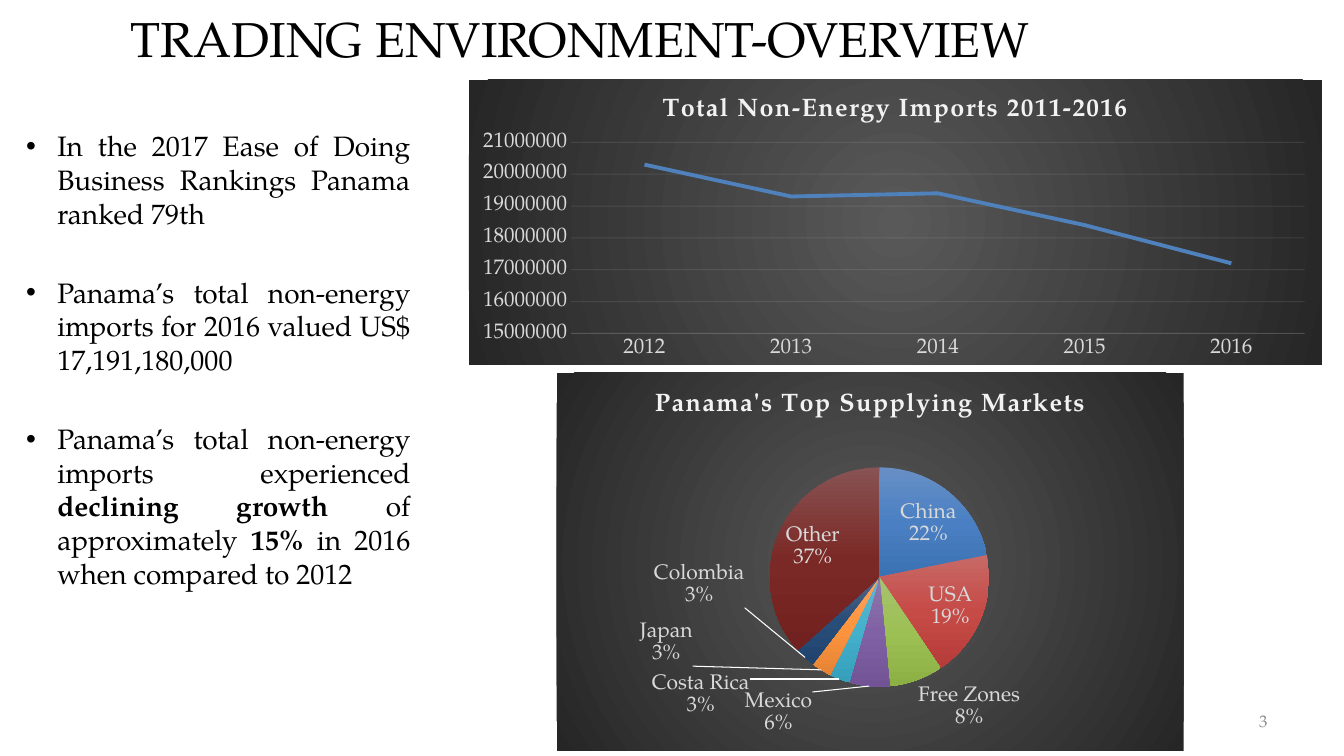
from copy import deepcopy

from lxml.etree import SubElement
from pptx import Presentation
from pptx.chart.data import CategoryChartData
from pptx.dml.color import RGBColor
from pptx.enum.chart import XL_CHART_TYPE as ChartType
from pptx.enum.chart import XL_LABEL_POSITION as LabelPosition
from pptx.enum.chart import XL_TICK_MARK as TickMark
from pptx.enum.text import MSO_ANCHOR as Anchor
from pptx.enum.text import PP_ALIGN as Align
from pptx.oxml import parse_xml
from pptx.oxml.ns import nsdecls, qn
from pptx.util import Inches, Pt

FONT = "TeX Gyre Pagella"
BLACK = RGBColor(0x00, 0x00, 0x00)
WHITE = RGBColor(0xFF, 0xFF, 0xFF)
PALE = RGBColor(0xF2, 0xF2, 0xF2)
LABEL_GREY = RGBColor(0xD9, 0xD9, 0xD9)
NUMBER_GREY = RGBColor(0x8C, 0x8C, 0x8C)
BLUE = RGBColor(0x4F, 0x81, 0xBD)
PANEL = (RGBColor(0x59, 0x59, 0x59), RGBColor(0x26, 0x26, 0x26))

BULLETS = [
    [("In the 2017 Ease of Doing Business Rankings Panama ranked 79th", False)],
    [("Panama’s total non-energy imports for 2016 valued US$ 17,191,180,000", False)],
    [
        ("Panama’s total non-energy imports experienced ", False),
        ("declining growth ", True),
        ("of approximately ", False),
        ("15% ", True),
        ("in 2016 when compared to 2012", False),
    ],
]
IMPORTS = {"2012": 20300000, "2013": 19300000, "2014": 19400000,
           "2015": 18400000, "2016": 17200000}
MARKETS = {"China": 22, "USA": 19, "Free Zones": 8, "Mexico": 6,
           "Costa Rica": 3, "Japan": 3, "Colombia": 3, "Other": 37}
SLICE_COLOURS = [
    [RGBColor.from_string(code) for code in codes.split()]
    for codes in (
        "688FC5 4A80C3 3B72B3", "C76967 C64B47 B63C39",
        "A6C36F 9DC054 8DB045", "8E78AC 8061A5 715396",
        "66B5CD 45B0CC 36A0BC", "FAA263 FF953E E58435",
        "536686 284D79 20446E", "885353 7B2926 71211F",
    )
]
LABEL_SHIFTS = {3: (-0.09, 0), 4: (-0.14, -0.03), 5: (-0.2, -0.14), 6: (-0.09, -0.26)}


def style_font(font, size, colour, bold=False):
    """Set the typeface, size, colour and weight of a font."""
    font.name, font.size, font.bold = FONT, Pt(size), bold
    font.color.rgb = colour


def add_run(paragraph, text, size, colour, bold=False):
    """Append one styled run to a paragraph."""
    run = paragraph.add_run()
    run.text = text
    style_font(run.font, size, colour, bold)
    return run


def gradient(colours, direction):
    """Return a gradient fill with evenly spaced stops."""
    last = len(colours) - 1
    stops = "".join(
        f'<a:gs pos="{100000 * index // last}"><a:srgbClr val="{colour}"/></a:gs>'
        for index, colour in enumerate(colours)
    )
    return parse_xml(
        f'<a:gradFill {nsdecls("a")} rotWithShape="1"><a:gsLst>{stops}</a:gsLst>'
        f"{direction}</a:gradFill>"
    )


def manual_layout(**settings):
    """Return a manual chart layout holding the given settings."""
    items = "".join(f'<c:{name} val="{value}"/>' for name, value in settings.items())
    return parse_xml(
        f'<c:layout {nsdecls("c")}><c:manualLayout>{items}</c:manualLayout></c:layout>'
    )


def add_title(slide, box):
    """Place the slide title in its placeholder."""
    title = slide.shapes.title
    title.left, title.top, title.width, title.height = map(Inches, box)
    frame = title.text_frame
    frame.vertical_anchor = Anchor.MIDDLE
    paragraph = frame.paragraphs[0]
    paragraph.alignment = Align.CENTER
    add_run(paragraph, "TRADING ENVIRONMENT-OVERVIEW", 35, BLACK)


def add_bullets(slide, box):
    """Write the justified bullet list."""
    frame = slide.shapes.add_textbox(*map(Inches, box)).text_frame
    frame.word_wrap = True
    for index, runs in enumerate(BULLETS):
        paragraph = frame.paragraphs[0] if index == 0 else frame.add_paragraph()
        paragraph.alignment = Align.JUSTIFY
        paragraph.space_before = Pt(32.5 if index else 0)
        properties = paragraph._p.get_or_add_pPr()
        properties.set("marL", str(Inches(0.31)))
        properties.set("indent", str(-Inches(0.31)))
        SubElement(properties, qn("a:buFont")).set("typeface", "Arial")
        SubElement(properties, qn("a:buChar")).set("char", "•")
        for text, bold in runs:
            add_run(paragraph, text, 20, BLACK, bold)


def add_slide_number(slide, box):
    """Write the slide number."""
    frame = slide.shapes.add_textbox(*map(Inches, box)).text_frame
    frame.word_wrap = True
    frame.vertical_anchor = Anchor.MIDDLE
    paragraph = frame.paragraphs[0]
    paragraph.alignment = Align.RIGHT
    add_run(paragraph, "3", 12, NUMBER_GREY)


def add_panel_chart(slide, box, kind, heading, values, plot_box):
    """Add a titled chart on a dark radial panel with a fixed plot area."""
    data = CategoryChartData()
    data.categories = list(values)
    data.add_series("Series 1", list(values.values()))
    chart = slide.shapes.add_chart(kind, *map(Inches, box), data).chart
    style_font(chart.font, 10, BLACK)
    chart.has_legend = False
    chart.has_title = True
    paragraph = chart.chart_title.text_frame.paragraphs[0]
    run = add_run(paragraph, heading, 18, PALE, True)
    run.font._element.set("spc", "100")
    chart.chart_title.include_in_layout = False
    panel = parse_xml(f'<c:spPr {nsdecls("c", "a")}><a:ln><a:noFill/></a:ln></c:spPr>')
    centre = '<a:path path="circle"><a:fillToRect l="50000" t="50000" r="50000" b="50000"/></a:path>'
    panel.insert(0, gradient(PANEL, centre))
    chart.element.find(qn("c:chart")).addnext(panel)
    plot_area = next(chart.element.iter(qn("c:plotArea")))
    for layout in plot_area.findall(qn("c:layout")):
        plot_area.remove(layout)
    left, top, width, height = plot_box
    plot_area.insert(0, manual_layout(
        layoutTarget="inner", xMode="edge", yMode="edge", x=left, y=top, w=width, h=height))
    return chart


def add_imports_chart(slide, box):
    """Add the line chart of total imports."""
    chart = add_panel_chart(slide, box, ChartType.LINE, "Total Non-Energy Imports 2011-2016",
                            IMPORTS, (0.12, 0.22, 0.86, 0.67))
    chart.plots[0].vary_by_categories = False
    series = chart.plots[0].series[0]
    series.smooth = False
    series.format.line.color.rgb = BLUE
    series.format.line.width = Pt(2.75)
    years, amounts = chart.category_axis, chart.value_axis
    for axis in (years, amounts):
        axis.major_tick_mark = axis.minor_tick_mark = TickMark.NONE
        style_font(axis.tick_labels.font, 15, LABEL_GREY)
    amounts.minimum_scale, amounts.maximum_scale = 15000000, 21000000
    amounts.major_unit = 1000000
    amounts.format.line.fill.background()
    for line in (years.format.line, amounts.major_gridlines.format.line):
        line.color.rgb = PALE
        line.width = Pt(0.75)
    for tag in ("c:catAx", "c:valAx"):
        for outline in next(chart.element.iter(qn(tag))).iter(qn("a:ln")):
            for colour in outline.iter(qn("a:srgbClr")):
                SubElement(colour, qn("a:alpha")).set("val", "10000")


def add_markets_chart(slide, box):
    """Add the pie chart of supplying markets."""
    chart = add_panel_chart(slide, box, ChartType.PIE, "Panama's Top Supplying Markets",
                            MARKETS, (0.34, 0.25, 0.35, 0.58))
    series = chart.plots[0].series[0]
    for index, colours in enumerate(SLICE_COLOURS):
        series.points[index].format.fill.solid()
    for slice_element, colours in zip(chart.element.iter(qn("c:dPt")), SLICE_COLOURS):
        properties = slice_element.find(qn("c:spPr"))
        properties.replace(properties.find(qn("a:solidFill")),
                           gradient(colours, '<a:lin ang="5400000" scaled="0"/>'))
    labels = series.data_labels
    style_font(labels.font, 15, LABEL_GREY)
    labels.show_value, labels.show_category_name, labels.show_percentage = False, True, True
    labels.position = LabelPosition.BEST_FIT
    add_label_details(next(chart.element.iter(qn("c:dLbls"))))


def add_label_details(labels):
    """Add line breaks, leader lines and shifted positions to the pie labels."""
    for tag in ("c:showLeaderLines", "c:leaderLines", "c:separator"):
        for element in labels.findall(qn(tag)):
            labels.remove(element)
    SubElement(labels, qn("c:separator")).text = "\n"
    shared = [deepcopy(element) for element in labels]
    SubElement(labels, qn("c:showLeaderLines")).set("val", "1")
    labels.append(parse_xml(
        f'<c:leaderLines {nsdecls("c", "a")}><c:spPr><a:ln w="9525"><a:solidFill>'
        f'<a:srgbClr val="{WHITE}"/></a:solidFill></a:ln></c:spPr></c:leaderLines>'))
    for position, (index, (across, down)) in enumerate(LABEL_SHIFTS.items()):
        label = parse_xml(f'<c:dLbl {nsdecls("c")}><c:idx val="{index}"/></c:dLbl>')
        label.append(manual_layout(x=across, y=down))
        label.extend(deepcopy(shared))
        labels.insert(position, label)


def main():
    """Build and save the slide."""
    presentation = Presentation()
    presentation.slide_width, presentation.slide_height = Inches(13.33), Inches(7.5)
    slide = presentation.slides.add_slide(presentation.slide_layouts[5])
    add_title(slide, (1.06, 0, 9.4, 0.76))
    add_bullets(slide, (0.16, 1.23, 4.01, 5))
    add_slide_number(slide, (9.56, 6.95, 3.11, 0.4))
    add_imports_chart(slide, (4.65, 0.79, 8.46, 2.83))
    add_markets_chart(slide, (5.52, 3.7, 6.22, 3.75))
    presentation.save("out.pptx")


if __name__ == "__main__":
    main()
